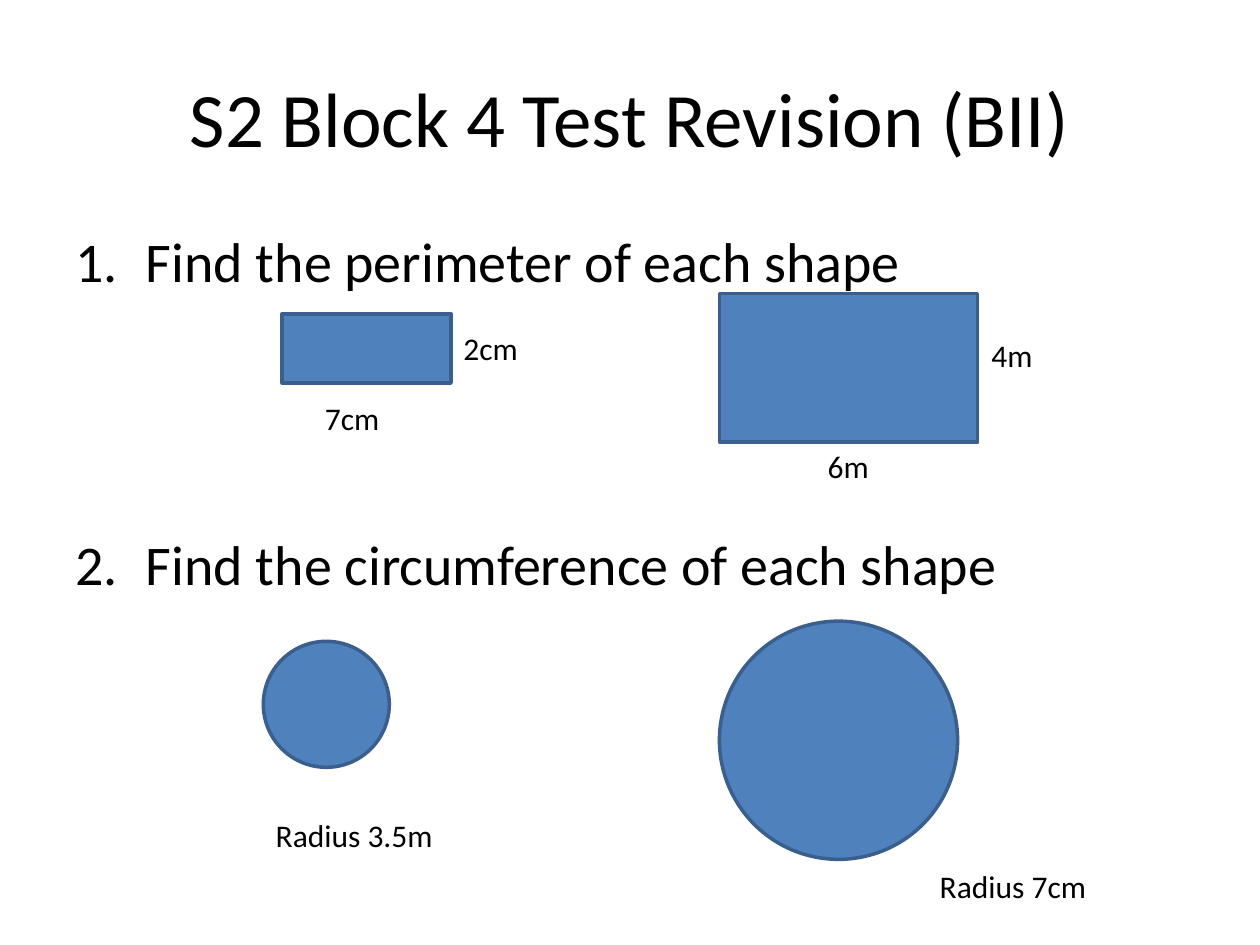
from dataclasses import dataclass

import pptx
import pptx.dml.color
import pptx.enum.shapes
import pptx.enum.text
import pptx.util
from lxml import etree

Align = pptx.enum.text.PP_ALIGN
Anchor = pptx.enum.text.MSO_ANCHOR
Preset = pptx.enum.shapes.MSO_SHAPE

# The slide is a grid of 100 columns by 75 rows
COLUMNS, ROWS = 100, 75
CELL = pptx.util.Inches(0.1)


@dataclass(frozen=True)
class Theme:
    font: str = "Calibri"
    ink: str = "000000"
    fill: str = "4F81BD"
    outline: str = "3A5F8C"
    outline_width: float = 2
    title_size: float = 44
    question_size: float = 32
    label_size: float = 18


THEME = Theme()


@dataclass(frozen=True)
class Area:
    column: float
    row: float
    columns: float
    rows: float

    def emu(self) -> list[int]:
        return [round(cells * CELL)
                for cells in (self.column, self.row, self.columns, self.rows)]


@dataclass(frozen=True)
class Figure:
    preset: Preset
    area: Area


@dataclass(frozen=True)
class Measure:
    text: str
    area: Area


TITLE_AREA = Area(5, 3, 90, 12.5)
QUESTIONS_AREA = Area(5, 17.5, 90, 49.5)
QUESTIONS = ["Find the perimeter of each shape",
             "Find the circumference of each shape"]
QUESTION_GAP = 134.6
NUMBER_INDENT = pptx.util.Inches(0.56)

FIGURES = [
    Figure(Preset.RECTANGLE, Area(22.4, 24.9, 13.4, 5.5)),
    Figure(Preset.RECTANGLE, Area(57.1, 23.3, 20.5, 11.8)),
    Figure(Preset.OVAL, Area(20.9, 50.9, 10, 10)),
    Figure(Preset.OVAL, Area(57.1, 49.3, 18.9, 18.9)),
]

MEASURES = [
    Measure("7cm", Area(24.8, 31.2, 6.4, 4)),
    Measure("2cm", Area(35.8, 25.6, 6.4, 4)),
    Measure("6m", Area(64.7, 35, 5.3, 4)),
    Measure("4m", Area(77.7, 26.2, 5.3, 4)),
    Measure("Radius 3.5m", Area(20.9, 64.3, 14.6, 4)),
    Measure("Radius 7cm", Area(73.6, 68.3, 13.8, 4)),
]


def rgb(value: str) -> pptx.dml.color.RGBColor:
    return pptx.dml.color.RGBColor.from_string(value)


def number_paragraph(paragraph) -> None:
    """Give a paragraph an automatic number with a hanging indent."""
    properties = paragraph._p.get_or_add_pPr()
    properties.set("marL", str(NUMBER_INDENT))
    properties.set("indent", str(-NUMBER_INDENT))
    bullet = etree.SubElement(properties, pptx.oxml.ns.qn("a:buAutoNum"))
    bullet.set("type", "arabicPeriod")


def add_text(slide, area: Area, *lines: str, size: float,
             align: Align = Align.LEFT, anchor: Anchor = Anchor.TOP,
             wrap: bool = True, numbered: bool = False, gap: float = 0) -> None:
    frame = slide.shapes.add_textbox(*area.emu()).text_frame
    frame.word_wrap = wrap
    frame.vertical_anchor = anchor
    if not wrap:
        frame.auto_size = pptx.enum.text.MSO_AUTO_SIZE.SHAPE_TO_FIT_TEXT
    for index, line in enumerate(lines):
        paragraph = frame.add_paragraph() if index else frame.paragraphs[0]
        paragraph.alignment = align
        if index:
            paragraph.space_before = pptx.util.Pt(gap)
        if numbered:
            number_paragraph(paragraph)
        run = paragraph.add_run()
        run.text = line
        run.font.name = THEME.font
        run.font.size = pptx.util.Pt(size)
        run.font.color.rgb = rgb(THEME.ink)


def add_figure(slide, figure: Figure) -> None:
    shape = slide.shapes.add_shape(figure.preset, *figure.area.emu())
    shape.shadow.inherit = False
    shape.fill.solid()
    shape.fill.fore_color.rgb = rgb(THEME.fill)
    shape.line.color.rgb = rgb(THEME.outline)
    shape.line.width = pptx.util.Pt(THEME.outline_width)


def main() -> None:
    deck = pptx.Presentation()
    deck.slide_width, deck.slide_height = COLUMNS * CELL, ROWS * CELL
    slide = deck.slides.add_slide(deck.slide_layouts[6])

    # Title and numbered questions
    add_text(slide, TITLE_AREA, "S2 Block 4 Test Revision (BII)",
             size=THEME.title_size, align=Align.CENTER, anchor=Anchor.MIDDLE)
    add_text(slide, QUESTIONS_AREA, *QUESTIONS, size=THEME.question_size,
             numbered=True, gap=QUESTION_GAP)

    # Figures with their measures
    for figure in FIGURES:
        add_figure(slide, figure)
    for measure in MEASURES:
        add_text(slide, measure.area, measure.text,
                 size=THEME.label_size, wrap=False)

    deck.save("out.pptx")


if __name__ == "__main__":
    main()
